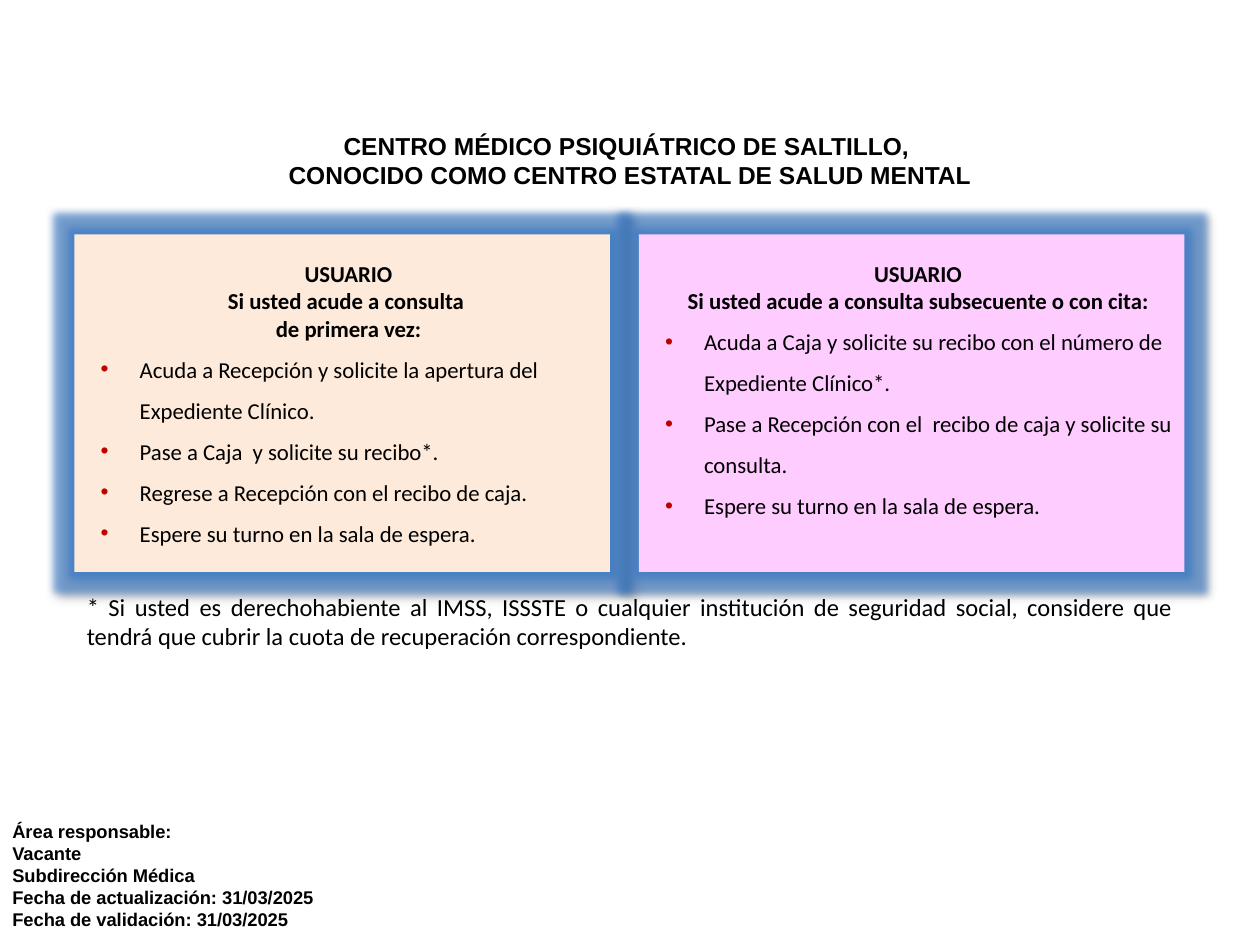
from lxml import etree
from pptx import Presentation
from pptx.dml.color import RGBColor
from pptx.enum import shapes, text
from pptx.oxml import ns
from pptx.util import Inches, Pt

BLACK = RGBColor(0x00, 0x00, 0x00)
PEACH = RGBColor(0xFD, 0xEA, 0xDA)
PINK = RGBColor(0xFF, 0xCC, 0xFF)
BULLET_RED = RGBColor(0xC0, 0x00, 0x00)
GLOW_BLUE = RGBColor(0x3A, 0x7C, 0xCB)


def add_element(parent, tag, **attributes):
    element = etree.SubElement(parent, ns.qn(tag))
    for name, value in attributes.items():
        element.set(name, str(value))
    return element


def add_span(para, words, font, size, bold=False):
    span = para.add_run()
    span.text = words
    span.font.name = font
    span.font.size = Pt(size)
    span.font.bold = bold
    span.font.color.rgb = BLACK


def next_para(frame, index):
    return frame.paragraphs[0] if index == 0 else frame.add_paragraph()


def add_text_box(page, left, top, width, height):
    frame = page.shapes.add_textbox(left, top, width, height).text_frame
    frame.word_wrap = True
    return frame


def add_glow_and_shadow(shape):
    effects = add_element(shape._element.spPr, "a:effectLst")
    glow = add_element(effects, "a:glow", rad=Pt(8))
    color = add_element(glow, "a:srgbClr", val=GLOW_BLUE)
    add_element(color, "a:alpha", val=60000)
    shadow = add_element(effects, "a:outerShdw", blurRad=Pt(4), dist=Pt(3),
                         dir=45 * 60000, algn="tl", rotWithShape=0)
    color = add_element(shadow, "a:srgbClr", val=BLACK)
    add_element(color, "a:alpha", val=40000)


def set_indent(para, margin, hanging=0):
    properties = para._p.get_or_add_pPr()
    properties.set("marL", str(margin))
    properties.set("indent", str(-hanging))
    return properties


def add_bullet(para):
    properties = set_indent(para, Inches(0.42), Inches(0.31))
    color = add_element(properties, "a:buClr")
    add_element(color, "a:srgbClr", val=BULLET_RED)
    add_element(properties, "a:buFont", typeface="Arial")
    add_element(properties, "a:buChar", char="•")


def place_title(page, left, top, width, height, lines):
    title = page.shapes.title
    title.left, title.top, title.width, title.height = left, top, width, height
    frame = title.text_frame
    frame.word_wrap = True
    frame.auto_size = text.MSO_AUTO_SIZE.NONE
    frame.vertical_anchor = text.MSO_ANCHOR.TOP
    frame.margin_top = Inches(0.28)
    for index, line in enumerate(lines):
        para = next_para(frame, index)
        para.alignment = text.PP_ALIGN.CENTER
        add_span(para, line, "Arial", 14, bold=True)


def add_panel(page, left, top, width, height, fill, heading, steps, bottom):
    panel = page.shapes.add_shape(shapes.MSO_SHAPE.RECTANGLE,
                                  left, top, width, height)
    panel.fill.solid()
    panel.fill.fore_color.rgb = fill
    panel.line.fill.background()
    add_glow_and_shadow(panel)
    frame = panel.text_frame
    frame.word_wrap = True
    frame.vertical_anchor = text.MSO_ANCHOR.MIDDLE
    frame.margin_bottom = bottom
    for index, line in enumerate(heading):
        para = next_para(frame, index)
        para.alignment = text.PP_ALIGN.CENTER
        set_indent(para, Inches(0.1))
        add_span(para, line, "Calibri", 13, bold=True)
    for step in steps:
        para = frame.add_paragraph()
        para.alignment = text.PP_ALIGN.LEFT
        para.line_spacing = 1.5
        add_bullet(para)
        add_span(para, step, "Calibri", 13)


def add_note(page, left, top, width, height, words):
    para = add_text_box(page, left, top, width, height).paragraphs[0]
    para.alignment = text.PP_ALIGN.JUSTIFY
    add_span(para, words, "Calibri", 14)


def add_responsible_area(page, left, top, width, height, lines):
    frame = add_text_box(page, left, top, width, height)
    for index, line in enumerate(lines):
        add_span(next_para(frame, index), line, "Arial", 10.5, bold=True)


def main():
    deck = Presentation()
    deck.slide_width, deck.slide_height = Inches(10), Inches(7.5)
    page = deck.slides.add_slide(deck.slide_layouts.get_by_name("Title Only"))

    place_title(page, Inches(1.06), Inches(0.76), Inches(7.88), Inches(0.71), [
        "CENTRO MÉDICO PSIQUIÁTRICO DE SALTILLO, ",
        "CONOCIDO COMO CENTRO ESTATAL DE SALUD MENTAL",
    ])
    panel_top, panel_height = Inches(1.86), Inches(2.68)
    add_panel(
        page, Inches(0.59), panel_top, Inches(4.25), panel_height, PEACH,
        ["USUARIO", "Si usted acude a consulta ", "de primera vez:"],
        ["Acuda a Recepción y solicite la apertura del Expediente Clínico.",
         "Pase a Caja  y solicite su recibo*.",
         "Regrese a Recepción con el recibo de caja.",
         "Espere su turno en la sala de espera."],
        bottom=Inches(0.05))
    add_panel(
        page, Inches(5.07), panel_top, Inches(4.33), panel_height, PINK,
        ["USUARIO", "Si usted acude a consulta subsecuente o con cita:"],
        ["Acuda a Caja y solicite su recibo con el número de Expediente "
         "Clínico*.",
         "Pase a Recepción con el  recibo de caja y solicite su consulta.",
         "Espere su turno en la sala de espera."],
        bottom=Inches(0.27))
    add_note(
        page, Inches(0.59), Inches(4.65), Inches(8.82), Inches(0.57),
        "* Si usted es derechohabiente al IMSS, ISSSTE o cualquier institución "
        "de seguridad social, considere que tendrá que cubrir la cuota de "
        "recuperación correspondiente.")
    add_responsible_area(
        page, Inches(0), Inches(6.46), Inches(3.7), Inches(0.98),
        ["Área responsable:", "Vacante", "Subdirección Médica",
         "Fecha de actualización: 31/03/2025",
         "Fecha de validación: 31/03/2025"])
    deck.save("out.pptx")


if __name__ == "__main__":
    main()
